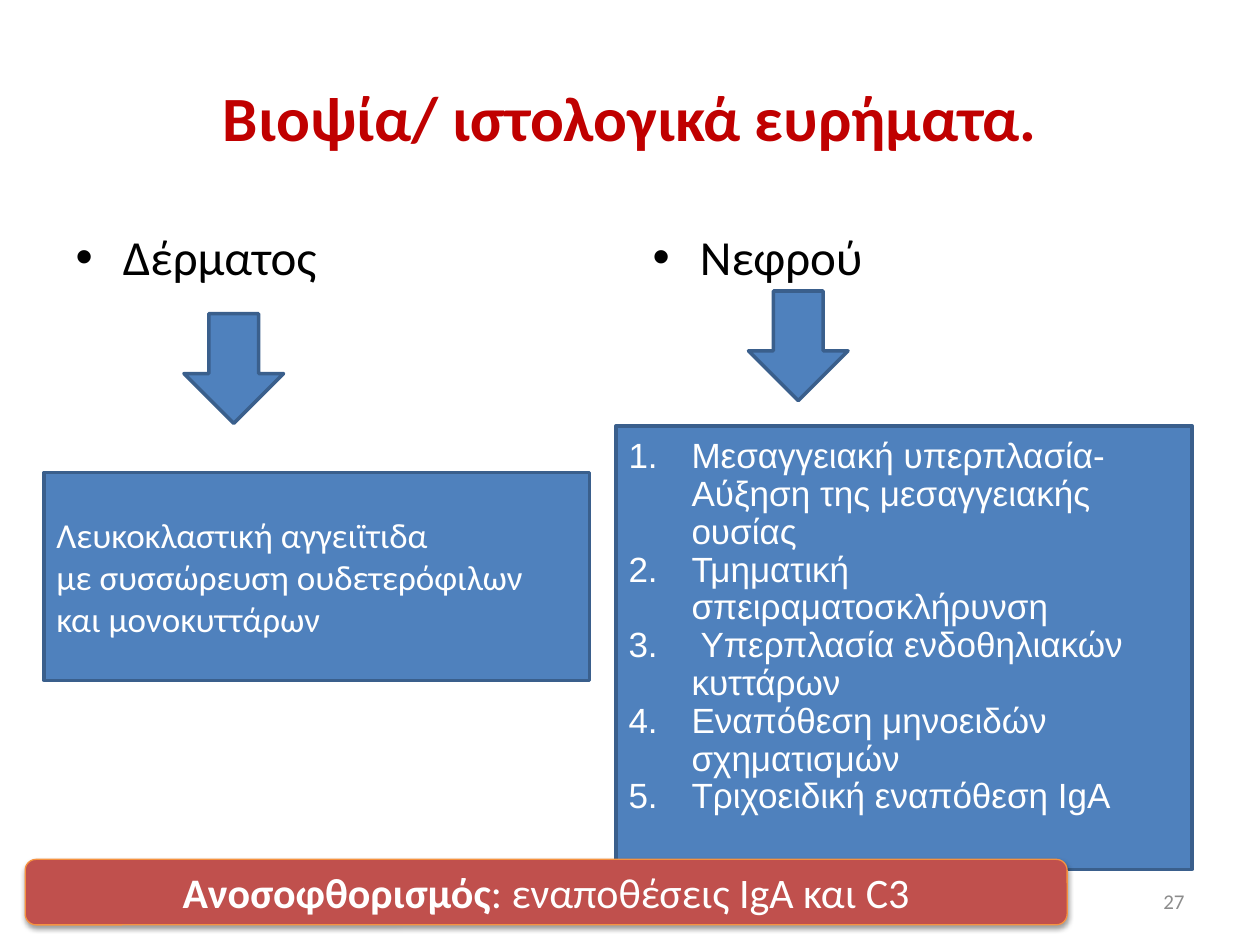
from lxml import etree
from pptx import Presentation
from pptx.dml.color import RGBColor
from pptx.enum.shapes import MSO_SHAPE
from pptx.enum.text import MSO_ANCHOR, PP_ALIGN
from pptx.oxml.ns import qn
from pptx.util import Inches, Pt

DOWN_ARROW = MSO_SHAPE.DOWN_ARROW
RECTANGLE = MSO_SHAPE.RECTANGLE
ROUNDED_RECTANGLE = MSO_SHAPE.ROUNDED_RECTANGLE
MIDDLE = MSO_ANCHOR.MIDDLE
LEFT, CENTER, RIGHT = PP_ALIGN.LEFT, PP_ALIGN.CENTER, PP_ALIGN.RIGHT

BLUE, DARK_BLUE = "4F81BD", "3A5F8C"
RED, ORANGE, TITLE_RED = "C0504D", "F69240", "C00000"
WHITE, BLACK, GRAY = "FFFFFF", "000000", "8C8C8C"

SKIN_FINDINGS = [
    "Λευκοκλαστική αγγειϊτιδα",
    "με συσσώρευση ουδετερόφιλων",
    "και μονοκυττάρων",
]
KIDNEY_FINDINGS = [
    "Μεσαγγειακή υπερπλασία-Αύξηση της μεσαγγειακής ουσίας",
    "Τμηματική σπειραματοσκλήρυνση",
    " Υπερπλασία ενδοθηλιακών κυττάρων",
    "Εναπόθεση μηνοειδών σχηματισμών",
    "Τριχοειδική εναπόθεση IgA",
]


def color(value):
    return RGBColor.from_string(value)


def add_run(paragraph, text, size, text_color, bold=False, font="Calibri"):
    run = paragraph.add_run()
    run.text = text
    run.font.name = font
    run.font.size = Pt(size)
    run.font.bold = bold
    run.font.color.rgb = color(text_color)


def fill_placeholder(placeholder, box, text, size, text_color, bold=False):
    placeholder.left, placeholder.top, placeholder.width, placeholder.height = map(Inches, box)
    add_run(placeholder.text_frame.paragraphs[0], text, size, text_color, bold)


def add_panel(slide, kind, box, fill=BLUE, line=DARK_BLUE, line_width=2):
    shape = slide.shapes.add_shape(kind, *map(Inches, box))
    shape.shadow.inherit = False
    shape.fill.solid()
    shape.fill.fore_color.rgb = color(fill)
    shape.line.color.rgb = color(line)
    shape.line.width = Pt(line_width)
    shape.text_frame.word_wrap = True
    shape.text_frame.vertical_anchor = MIDDLE
    return shape


def add_lines(text_frame, lines, font):
    for index, line in enumerate(lines):
        paragraph = text_frame.add_paragraph() if index else text_frame.paragraphs[0]
        paragraph.alignment = LEFT
        add_run(paragraph, line, 20, WHITE, font=font)


def number_paragraph(paragraph):
    paragraph.line_spacing = 0.9
    properties = paragraph._p.get_or_add_pPr()
    properties.set("marL", str(Inches(0.5)))
    properties.set("indent", str(Inches(-0.5)))
    etree.SubElement(properties, qn("a:buFont"), typeface="+mj-lt")
    etree.SubElement(properties, qn("a:buAutoNum"), type="arabicPeriod")


def add_shadow(shape):
    effects = shape._element.spPr.find(qn("a:effectLst"))
    shadow = etree.SubElement(effects, qn("a:outerShdw"), blurRad=str(Pt(3.1)),
                              dist=str(Pt(1.6)), dir="5400000", rotWithShape="0")
    shade = etree.SubElement(shadow, qn("a:srgbClr"), val=BLACK)
    etree.SubElement(shade, qn("a:alpha"), val="38000")


def add_page_number(slide, box, number):
    text_frame = slide.shapes.add_textbox(*map(Inches, box)).text_frame
    text_frame.word_wrap = True
    text_frame.vertical_anchor = MIDDLE
    paragraph = text_frame.paragraphs[0]
    paragraph.alignment = RIGHT
    add_run(paragraph, number, 12, GRAY)


def main():
    presentation = Presentation()
    presentation.slide_width = Inches(10)
    presentation.slide_height = Inches(7.5)
    slide = presentation.slides.add_slide(presentation.slide_layouts[3])
    title, skin, kidney = slide.placeholders

    fill_placeholder(title, (0.5, 0.3, 9, 1.25), "Βιοψία/ ιστολογικά ευρήματα.", 36, TITLE_RED, True)
    fill_placeholder(skin, (0.5, 1.75, 4.42, 4.95), "Δέρματος", 28, BLACK)
    fill_placeholder(kidney, (5.08, 1.75, 4.42, 4.95), "Νεφρού", 28, BLACK)

    for left, top in ((1.46, 2.49), (5.94, 2.31)):
        add_panel(slide, DOWN_ARROW, (left, top, 0.79, 0.87))

    skin_panel = add_panel(slide, RECTANGLE, (0.35, 3.75, 4.33, 1.65))
    add_lines(skin_panel.text_frame, SKIN_FINDINGS, "Calibri")

    kidney_panel = add_panel(slide, RECTANGLE, (4.89, 3.38, 4.57, 3.52))
    kidney_panel.text_frame.margin_bottom = Inches(0.37)
    add_lines(kidney_panel.text_frame, KIDNEY_FINDINGS, "Arial")
    for paragraph in kidney_panel.text_frame.paragraphs:
        number_paragraph(paragraph)

    banner = add_panel(slide, ROUNDED_RECTANGLE, (0.2, 6.82, 8.27, 0.52), RED, ORANGE, 0.75)
    add_shadow(banner)
    paragraph = banner.text_frame.paragraphs[0]
    paragraph.alignment = CENTER
    add_run(paragraph, "Ανοσοφθορισμός", 24, WHITE, True)
    add_run(paragraph, ": εναποθέσεις IgA και C3", 24, WHITE)

    add_page_number(slide, (7.17, 6.95, 2.33, 0.4), "27")
    presentation.save("out.pptx")


if __name__ == "__main__":
    main()
